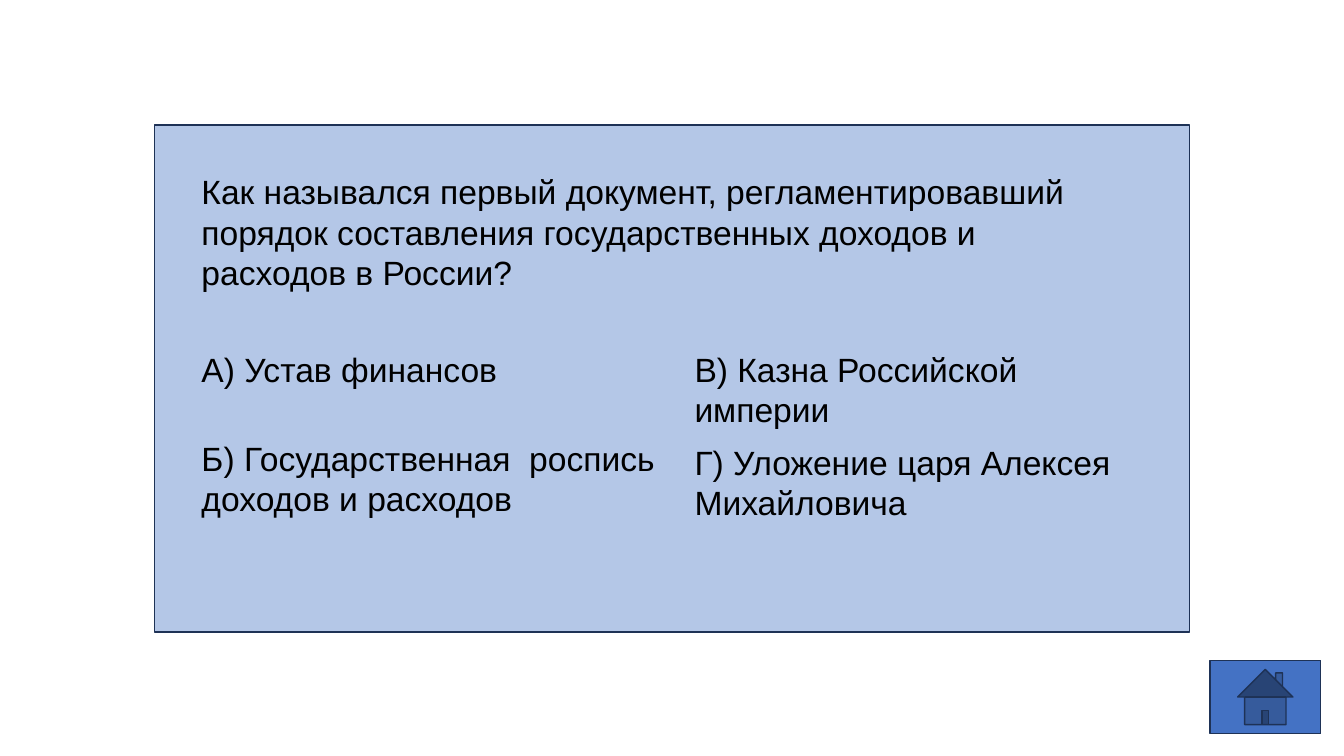
import pptx
import pptx.util
import pptx.dml.color
import pptx.enum.shapes
import pptx.enum.text

Inches = pptx.util.Inches
Shape = pptx.enum.shapes.MSO_SHAPE
BLACK = pptx.dml.color.RGBColor(0x00, 0x00, 0x00)
PANEL_BLUE = pptx.dml.color.RGBColor(0xB4, 0xC7, 0xE7)
BUTTON_BLUE = pptx.dml.color.RGBColor(0x44, 0x72, 0xC4)
OUTLINE_NAVY = pptx.dml.color.RGBColor(0x1E, 0x32, 0x56)


class QuizSlide:
    """Draws quiz elements on one slide in a shared style."""

    font_format = {"name": "Arial", "size": pptx.util.Pt(24)}

    def __init__(self, slide):
        self.slide = slide

    def box(self, kind, left, top, width, height, fill):
        shape = self.slide.shapes.add_shape(
            kind, Inches(left), Inches(top), Inches(width), Inches(height))
        shape.shadow.inherit = False
        shape.fill.solid()
        shape.fill.fore_color.rgb = fill
        shape.line.color.rgb = OUTLINE_NAVY
        shape.line.width = pptx.util.Pt(1)

    def text(self, wording, left, top, width, height, wrap=True):
        frame = self.slide.shapes.add_textbox(
            Inches(left), Inches(top), Inches(width), Inches(height)).text_frame
        frame_format = {
            "word_wrap": wrap,
            "auto_size": pptx.enum.text.MSO_AUTO_SIZE.SHAPE_TO_FIT_TEXT,
        }
        for name, value in frame_format.items():
            setattr(frame, name, value)
        run = frame.paragraphs[0].add_run()
        run.text = wording
        for name, value in self.font_format.items():
            setattr(run.font, name, value)
        run.font.color.rgb = BLACK


def main():
    deck = pptx.Presentation()
    deck.slide_width = Inches(13.33)
    deck.slide_height = Inches(7.5)
    quiz = QuizSlide(deck.slides.add_slide(deck.slide_layouts[6]))

    left_column, right_column, first_row = 1.9, 6.79, 3.41
    quiz.box(Shape.RECTANGLE, 1.53, 1.24, 10.27, 5.03, PANEL_BLUE)
    quiz.text("Как назывался первый документ, регламентировавший порядок "
              "составления государственных доходов и расходов в России?",
              left_column, 1.65, 9.04, 1.31)
    answers = [
        ("А) Устав финансов", left_column, first_row, 3.16, 0.5, False),
        ("Б) Государственная  роспись доходов и расходов",
         left_column, 4.29, 4.9, 0.91, True),
        ("В) Казна Российской империи", right_column, first_row, 4.83, 0.5, False),
        ("Г) Уложение царя Алексея Михайловича",
         right_column, 4.33, 4.83, 0.91, True),
    ]
    for answer in answers:
        quiz.text(*answer)
    quiz.box(Shape.ACTION_BUTTON_HOME, 12, 6.55, 1.1, 0.73, BUTTON_BLUE)

    deck.save("out.pptx")


if __name__ == "__main__":
    main()
